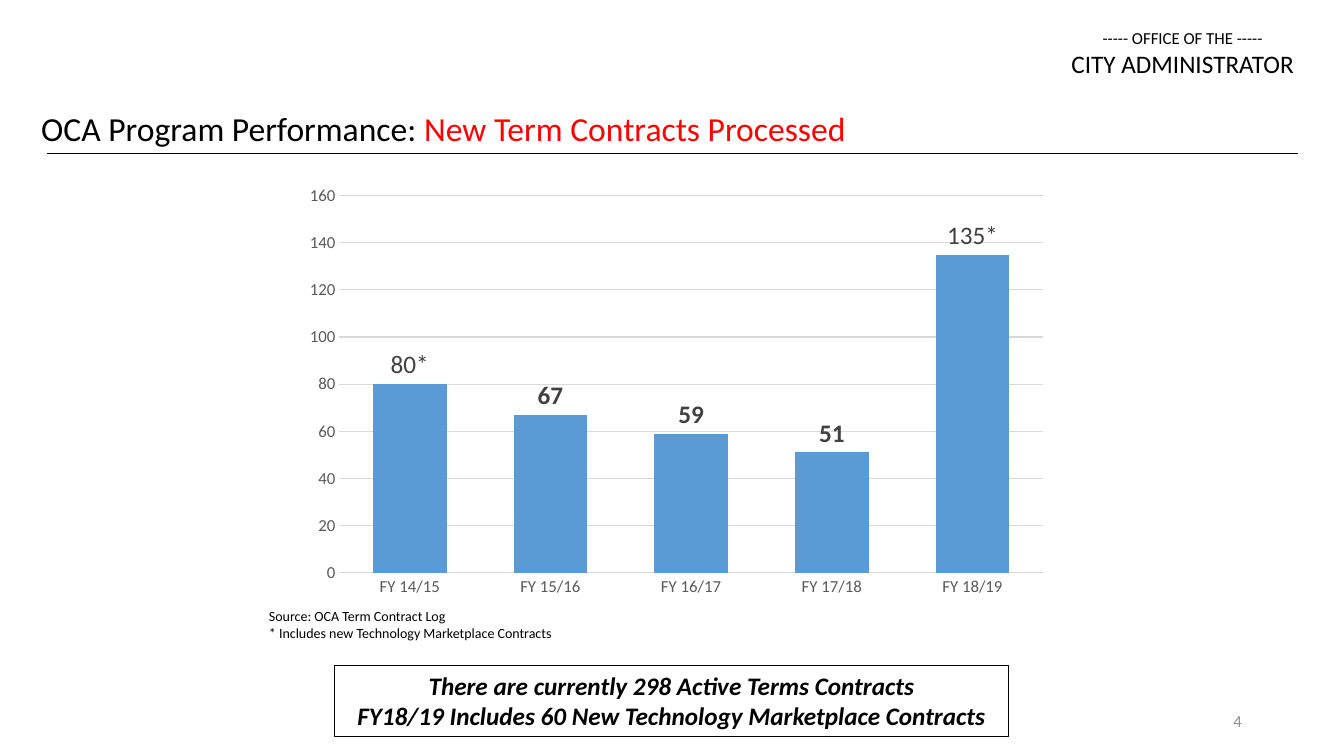
from lxml.etree import SubElement
from pptx import Presentation
from pptx.chart.data import CategoryChartData
from pptx.dml.color import RGBColor
from pptx.enum.chart import XL_CHART_TYPE, XL_LABEL_POSITION, XL_TICK_MARK
from pptx.enum.shapes import MSO_CONNECTOR, MSO_SHAPE
from pptx.enum.text import MSO_ANCHOR, PP_ALIGN
from pptx.oxml import parse_xml
from pptx.oxml.ns import nsdecls, qn
from pptx.util import Cm, Pt


def style(font, size, color, bold=False, italic=False):
    font.name = "Calibri"
    font.size = Pt(size)
    font.bold = bold
    font.italic = italic
    font.color.rgb = RGBColor.from_string(color)


def write(shape, text, sizes, color="000000", align=PP_ALIGN.LEFT, wrap=False, emphasis=False):
    frame = shape.text_frame
    frame.word_wrap = wrap
    frame.text = text
    for para, size in zip(frame.paragraphs, sizes):
        para.alignment = align
        for span in para.runs:
            style(span.font, size, color, emphasis, emphasis)
    return frame


deck = Presentation()
deck.slide_width = Cm(33.87)
deck.slide_height = Cm(19.05)
page = deck.slides.add_slide(deck.slide_layouts[6])

# Office name
office = page.shapes.add_textbox(Cm(26.72), Cm(0.58), Cm(6.17), Cm(1.55))
write(office, "----- OFFICE OF THE -----\nCITY ADMINISTRATOR", [12, 18], align=PP_ALIGN.CENTER)

# Title with rule below
title = page.shapes.add_textbox(Cm(0.79), Cm(2.59), Cm(20.78), Cm(1.27))
heading = write(title, "OCA Program Performance: ", [24]).paragraphs[0]
topic = heading.add_run()
topic.text = "New Term Contracts Processed"
style(topic.font, 24, "FF0000")

rule = page.shapes.add_connector(MSO_CONNECTOR.STRAIGHT, Cm(1.19), Cm(3.87), Cm(32.72), Cm(3.87))
rule.line.color.rgb = RGBColor.from_string("000000")
rule.line.width = Pt(0.5)
SubElement(rule.element.spPr, qn("a:effectLst"))

# Contracts chart
data = CategoryChartData(number_format="#,##0")
data.categories = [f"FY {year}/{year + 1}" for year in range(14, 19)]
data.add_series("Series 1", [80, 67, 59, 51, 135])
chart = page.shapes.add_chart(
    XL_CHART_TYPE.COLUMN_CLUSTERED, Cm(7.19), Cm(4.39), Cm(19.48), Cm(10.8), data
).chart
style(chart.font, 10, "000000")
chart.has_legend = False
chart.has_title = False
plot = chart.plots[0]
plot.gap_width = 91
plot.overlap = -24
plot.vary_by_categories = False

# Axes and gridlines
for axis in (chart.category_axis, chart.value_axis):
    axis.major_tick_mark = XL_TICK_MARK.NONE
    axis.minor_tick_mark = XL_TICK_MARK.NONE
    style(axis.tick_labels.font, 12, "595959")
chart.value_axis.minimum_scale = 0
chart.value_axis.maximum_scale = 160
chart.value_axis.major_unit = 20
chart.value_axis.format.line.fill.background()
for line in (chart.category_axis.format.line, chart.value_axis.major_gridlines.format.line):
    line.color.rgb = RGBColor.from_string("D9D9D9")
    line.width = Pt(0.75)

# Columns and their labels
series = plot.series[0]
series.format.fill.solid()
series.format.fill.fore_color.rgb = RGBColor.from_string("5B9BD5")
labels = series.data_labels
labels.show_value = True
labels.number_format = "#,##0"
labels.number_format_is_linked = False
labels.position = XL_LABEL_POSITION.OUTSIDE_END
style(labels.font, 18, "404040", bold=True)
for index, text in {0: "80*", 4: "135*"}.items():
    label = series.points[index].data_label
    label.text_frame.text = text
    style(label.text_frame.paragraphs[0].runs[0].font, 18, "404040")
    label.position = XL_LABEL_POSITION.OUTSIDE_END

# Fixed inner plot area
plot_area = chart.element.find(".//" + qn("c:plotArea"))
for old_layout in plot_area.findall(qn("c:layout")):
    plot_area.remove(old_layout)
plot_area.insert(0, parse_xml(
    f'<c:layout {nsdecls("c")}><c:manualLayout><c:layoutTarget val="inner"/>'
    '<c:xMode val="edge"/><c:yMode val="edge"/><c:x val="0.07"/><c:y val="0.05"/>'
    '<c:w val="0.91"/><c:h val="0.88"/></c:manualLayout></c:layout>'
))

# Summary box
summary = page.shapes.add_shape(MSO_SHAPE.RECTANGLE, Cm(8.43), Cm(16.76), Cm(16.99), Cm(1.8))
summary.shadow.inherit = False
summary.fill.background()
summary.line.color.rgb = RGBColor.from_string("000000")
summary.line.width = Pt(0.75)
write(
    summary,
    "There are currently 298 Active Terms Contracts\n"
    "FY18/19 Includes 60 New Technology Marketplace Contracts",
    [18, 18], align=PP_ALIGN.CENTER, wrap=True, emphasis=True,
)

# Source note
source = page.shapes.add_textbox(Cm(6.53), Cm(15.19), Cm(7.77), Cm(1.12))
write(source, "Source: OCA Term Contract Log\n* Includes new Technology Marketplace Contracts", [10, 10])

# Page number
number = page.shapes.add_textbox(Cm(23.93), Cm(17.65), Cm(7.62), Cm(1.02))
frame = write(number, "4", [12], "8C8C8C", PP_ALIGN.RIGHT, wrap=True)
frame.vertical_anchor = MSO_ANCHOR.MIDDLE

deck.save("out.pptx")
